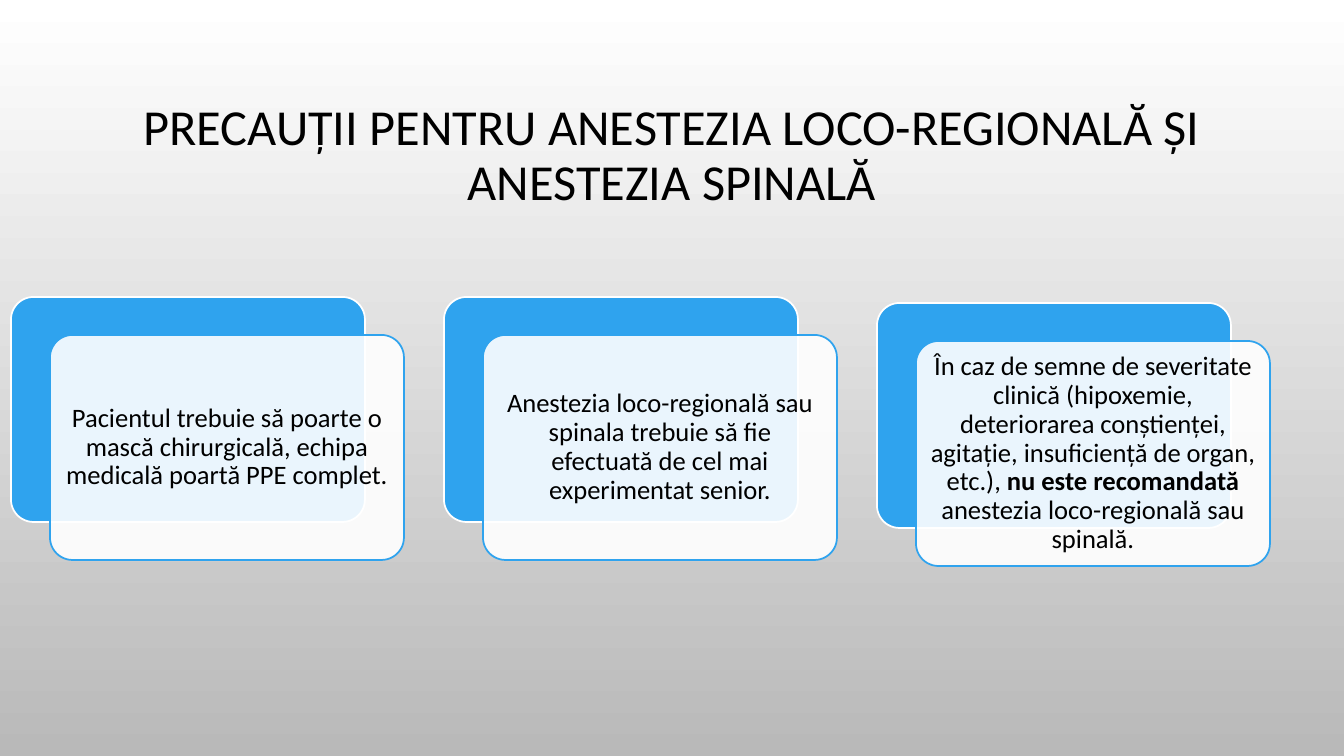
from lxml import etree
from pptx import Presentation
from pptx import util as u
from pptx.dml.color import RGBColor
from pptx.enum import shapes, text
from pptx.oxml.ns import qn

PX = 914400 / 100.8
HUES = {"blue": "2FA3EE", "white": "FFFFFF", "grey": "B9B9B9", "black": "000000"}
TITLE = "PRECAUȚII PENTRU ANESTEZIA LOCO-REGIONALĂ ȘI ANESTEZIA SPINALĂ"
CARDS = [
    (297, [("Pacientul trebuie să poarte o mască chirurgicală, echipa medicală "
            "poartă PPE complet.", False)]),
    (297, [("Anestezia loco-regională sau spinala trebuie să fie efectuată de cel "
            "mai experimentat senior.", False)]),
    (303, [("În caz de semne de severitate clinică (hipoxemie, deteriorarea "
            "conștienței, agitație, insuficiență de organ, etc.), ", False),
           ("nu este recomandată ", True),
           ("anestezia loco-regională sau spinală.", False)]),
]
LEFT, STEP, WIDE, HIGH = 11, 433, 354, 225
SHIFT, DROP = 39, 38


def px(n):
    return u.Emu(round(n * PX))


def hue(name):
    return RGBColor.from_string(HUES[name])


def write(frame, runs, size, color="black", font="Calibri", inset=None):
    frame.word_wrap = True
    frame.auto_size = text.MSO_AUTO_SIZE.NONE
    frame.vertical_anchor = text.MSO_ANCHOR.MIDDLE
    if inset is not None:
        frame.margin_left = frame.margin_right = px(inset)
        frame.margin_top = frame.margin_bottom = px(inset)
    para = frame.paragraphs[0]
    para.alignment = text.PP_ALIGN.CENTER
    para.line_spacing = 0.9
    for words, bold in runs:
        run = para.add_run()
        run.text = words
        run.font.size = u.Pt(size)
        run.font.name = font
        run.font.bold = bold
        run.font.color.rgb = hue(color)


class Deck:
    def __init__(self):
        self.prs = Presentation()
        self.prs.slide_width = px(1344)
        self.prs.slide_height = px(756)
        self.slide = self.prs.slides.add_slide(self.prs.slide_layouts[5])

    def fade(self, top, base):
        fill = self.slide.background.fill
        fill.gradient()
        fill.gradient_angle = 270
        for stop, name in zip(fill.gradient_stops, (top, base)):
            stop.color.rgb = hue(name)

    def title(self, words, x, y, w, h):
        box = self.slide.shapes.title
        box.left, box.top, box.width, box.height = map(px, (x, y, w, h))
        write(box.text_frame, [(words, False)], 36)

    def panel(self, x, y, fill, line, alpha=100):
        box = self.slide.shapes.add_shape(
            shapes.MSO_SHAPE.ROUNDED_RECTANGLE, *map(px, (x, y, WIDE, HIGH)))
        box.adjustments[0] = 0.1
        box.shadow.inherit = False
        box.fill.solid()
        box.fill.fore_color.rgb = hue(fill)
        box.line.color.rgb = hue(line)
        box.line.width = u.Pt(1.25)
        if alpha < 100:
            tint = box.fill._xPr.find(".//" + qn("a:srgbClr"))
            etree.SubElement(tint, qn("a:alpha")).set("val", str(alpha * 1000))
        return box

    def card(self, x, y, runs):
        self.panel(x, y, "blue", "white")
        front = self.panel(x + SHIFT, y + DROP, "white", "blue", alpha=90)
        write(front.text_frame, runs, 19, inset=8)


def main():
    deck = Deck()
    deck.fade("white", "grey")
    deck.title(TITLE, 101, 69, 1142, 175)
    for i, (top, runs) in enumerate(CARDS):
        deck.card(LEFT + i * STEP, top, runs)
    deck.prs.save("out.pptx")


if __name__ == "__main__":
    main()
